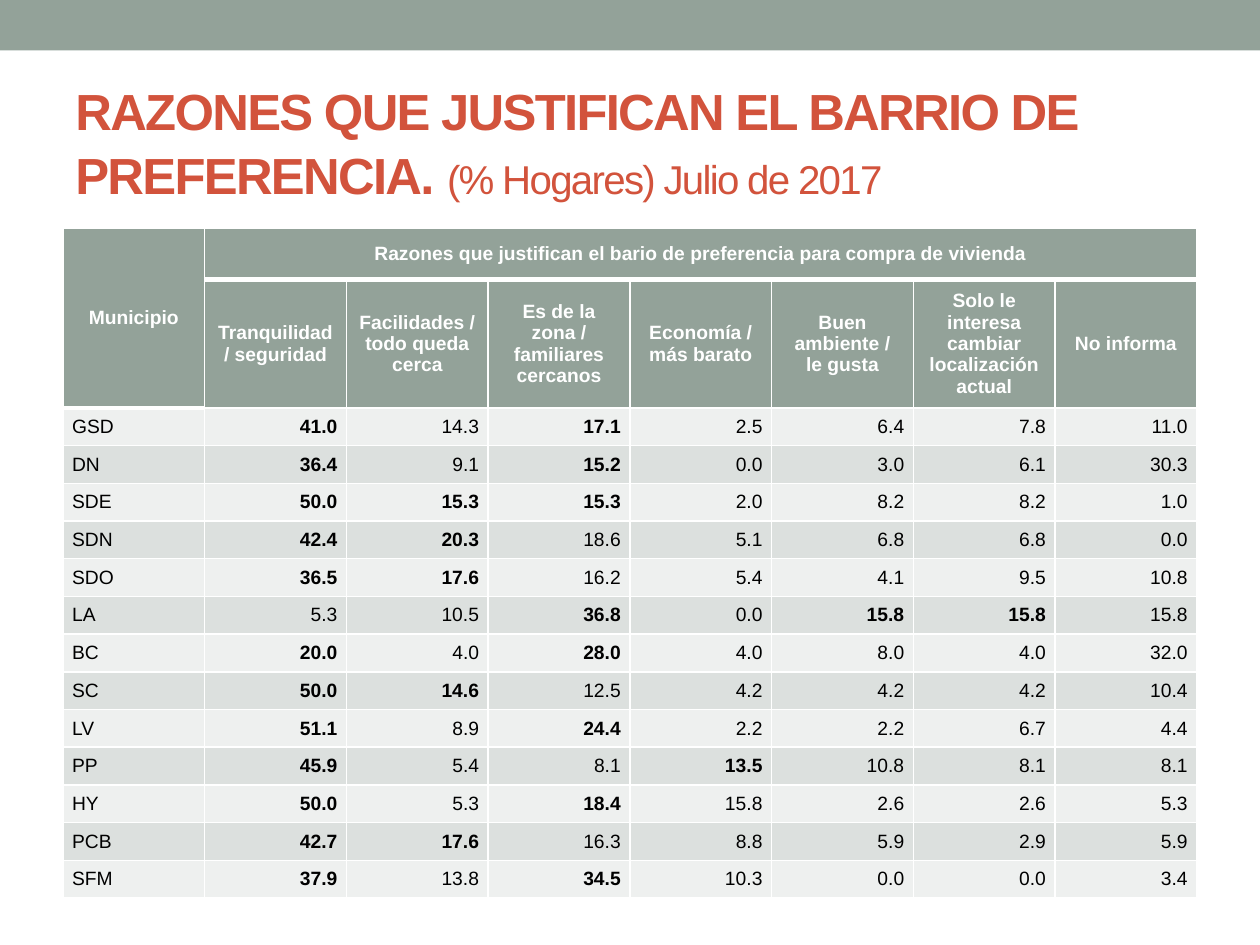
from dataclasses import dataclass
from typing import Any

from lxml import etree
from pptx import Presentation
from pptx.dml.color import RGBColor
from pptx.enum.shapes import MSO_SHAPE
from pptx.enum.text import MSO_ANCHOR, PP_ALIGN
from pptx.oxml.ns import qn
from pptx.util import Pt

RECTANGLE = MSO_SHAPE.RECTANGLE
MIDDLE = MSO_ANCHOR.MIDDLE
LEFT, CENTER, RIGHT = PP_ALIGN.LEFT, PP_ALIGN.CENTER, PP_ALIGN.RIGHT
JUSTIFY = PP_ALIGN.JUSTIFY

MUNICIPALITY = "Municipio"
QUESTION = "Razones que justifican el bario de preferencia para compra de vivienda"
REASONS = [
    "Tranquilidad / seguridad",
    "Facilidades / todo queda cerca",
    "Es de la zona / familiares cercanos",
    "Economía / más barato",
    "Buen ambiente / le gusta",
    "Solo le interesa cambiar localización actual",
    "No informa",
]
HOUSEHOLDS = {
    "GSD": [41.0, 14.3, 17.1, 2.5, 6.4, 7.8, 11.0],
    "DN": [36.4, 9.1, 15.2, 0.0, 3.0, 6.1, 30.3],
    "SDE": [50.0, 15.3, 15.3, 2.0, 8.2, 8.2, 1.0],
    "SDN": [42.4, 20.3, 18.6, 5.1, 6.8, 6.8, 0.0],
    "SDO": [36.5, 17.6, 16.2, 5.4, 4.1, 9.5, 10.8],
    "LA": [5.3, 10.5, 36.8, 0.0, 15.8, 15.8, 15.8],
    "BC": [20.0, 4.0, 28.0, 4.0, 8.0, 4.0, 32.0],
    "SC": [50.0, 14.6, 12.5, 4.2, 4.2, 4.2, 10.4],
    "LV": [51.1, 8.9, 24.4, 2.2, 2.2, 6.7, 4.4],
    "PP": [45.9, 5.4, 8.1, 13.5, 10.8, 8.1, 8.1],
    "HY": [50.0, 5.3, 18.4, 15.8, 2.6, 2.6, 5.3],
    "PCB": [42.7, 17.6, 16.3, 8.8, 5.9, 2.9, 5.9],
    "SFM": [37.9, 13.8, 34.5, 10.3, 0.0, 0.0, 3.4],
}
HEADER_HEIGHTS = [29.2, 69]
BODY_HEIGHT = 21.55
COLUMN_WIDTH = 81


def color(hex_code):
    return RGBColor.from_string(hex_code)


def leading_reasons(shares):
    """Flag the two highest shares, ties included, leaving out "No informa"."""
    threshold = sorted(shares[:-1])[-2]
    return [share >= threshold for share in shares[:-1]] + [False]


@dataclass
class SlideBuilder:
    slide: Any
    font: str = "Arial"
    sage: str = "93A299"
    brick: str = "D2533C"
    white: str = "FFFFFF"
    black: str = "000000"
    bands: tuple = ("EEF0EF", "DCE0DE")

    def add_text(self, paragraph, text, size, ink, bold=False):
        run = paragraph.add_run()
        run.text = text
        run.font.color.rgb = color(ink)
        for name, value in {"name": self.font, "size": Pt(size), "bold": bold}.items():
            setattr(run.font, name, value)
        return run

    def bar(self, left, top, width, height):
        bar = self.slide.shapes.add_shape(
            RECTANGLE, Pt(left), Pt(top), Pt(width), Pt(height))
        bar.shadow.inherit = False
        bar.fill.solid()
        bar.fill.fore_color.rgb = color(self.sage)
        bar.line.fill.background()

    def title(self, left, top, width, height, parts):
        frame = self.slide.shapes.add_textbox(
            Pt(left), Pt(top), Pt(width), Pt(height)).text_frame
        frame.word_wrap = True
        frame.vertical_anchor = MIDDLE
        heading = frame.paragraphs[0]
        heading.alignment = LEFT
        heading.line_spacing = 1.05
        for text, size, bold in parts:
            run = self.add_text(heading, text, size, self.brick, bold)
            run._r.get_or_add_rPr().set("spc", "-100")

    def grid(self, left, top, widths, heights):
        frame = self.slide.shapes.add_table(
            len(heights), len(widths), Pt(left), Pt(top),
            Pt(sum(widths)), Pt(sum(heights)))
        table = frame.table
        for column, width in zip(table.columns, widths):
            column.width = Pt(width)
        for row, height in zip(table.rows, heights):
            row.height = Pt(height)
        return table

    def borders(self, cell, thick=""):
        """Draw white edges, 3 pt on the sides in thick and 1 pt elsewhere."""
        properties = cell._tc.get_or_add_tcPr()
        for side in "LRTB":
            width = Pt(3 if side in thick else 1)
            edge = etree.SubElement(properties, qn(f"a:ln{side}"), w=str(int(width)))
            fill = etree.SubElement(edge, qn("a:solidFill"))
            etree.SubElement(fill, qn("a:srgbClr"), val=self.white)

    def cell(self, cell, text, fill, ink, align, bold=False, thick=""):
        self.borders(cell, thick)
        cell.fill.solid()
        cell.fill.fore_color.rgb = color(fill)
        cell.vertical_anchor = MIDDLE
        paragraph = cell.text_frame.paragraphs[0]
        paragraph.alignment = align
        if text:
            self.add_text(paragraph, text, 11, ink, bold)

    def header(self, cell, text="", thick=""):
        self.cell(cell, text, self.sage, self.white, CENTER, True, thick)

    def body(self, cell, text, band, align, bold=False, thick=""):
        insets = {"margin_left": 5.2, "margin_right": 5.2,
                  "margin_top": 0, "margin_bottom": 0}
        for name, value in insets.items():
            setattr(cell, name, Pt(value))
        self.cell(cell, text, self.bands[band], self.black, align, bold, thick)


def add_reasons_table(builder):
    heights = HEADER_HEIGHTS + [BODY_HEIGHT] * len(HOUSEHOLDS)
    last = len(REASONS)
    table = builder.grid(36, 130.6, [COLUMN_WIDTH] * (last + 1), heights)

    builder.header(table.cell(0, 0), MUNICIPALITY, thick="B")
    builder.header(table.cell(1, 0), thick="B")
    for column, reason in enumerate(REASONS, start=1):
        builder.header(table.cell(0, column), QUESTION if column == 1 else "", thick="B")
        builder.header(table.cell(1, column), reason, thick="T")
    table.cell(0, 0).merge(table.cell(1, 0))
    table.cell(0, 1).merge(table.cell(0, last))

    for index, (municipality, shares) in enumerate(HOUSEHOLDS.items()):
        row, band = index + len(HEADER_HEIGHTS), index % 2
        builder.body(table.cell(row, 0), municipality, band, JUSTIFY,
                     thick="" if index else "T")
        for column, (share, leads) in enumerate(
                zip(shares, leading_reasons(shares)), start=1):
            builder.body(table.cell(row, column), f"{share:.1f}", band, RIGHT, leads)


def main():
    deck = Presentation()
    deck.slide_width, deck.slide_height = Pt(720), Pt(540)
    builder = SlideBuilder(deck.slides.add_slide(deck.slide_layouts[6]))
    builder.bar(0, 0, 720, 28.8)
    builder.title(36, 41.75, 648, 77.75, [
        ("RAZONES QUE JUSTIFICAN EL BARRIO DE PREFERENCIA. ", 29, True),
        ("(% Hogares) Julio de 2017", 23, False),
    ])
    add_reasons_table(builder)
    deck.save("out.pptx")


if __name__ == "__main__":
    main()
